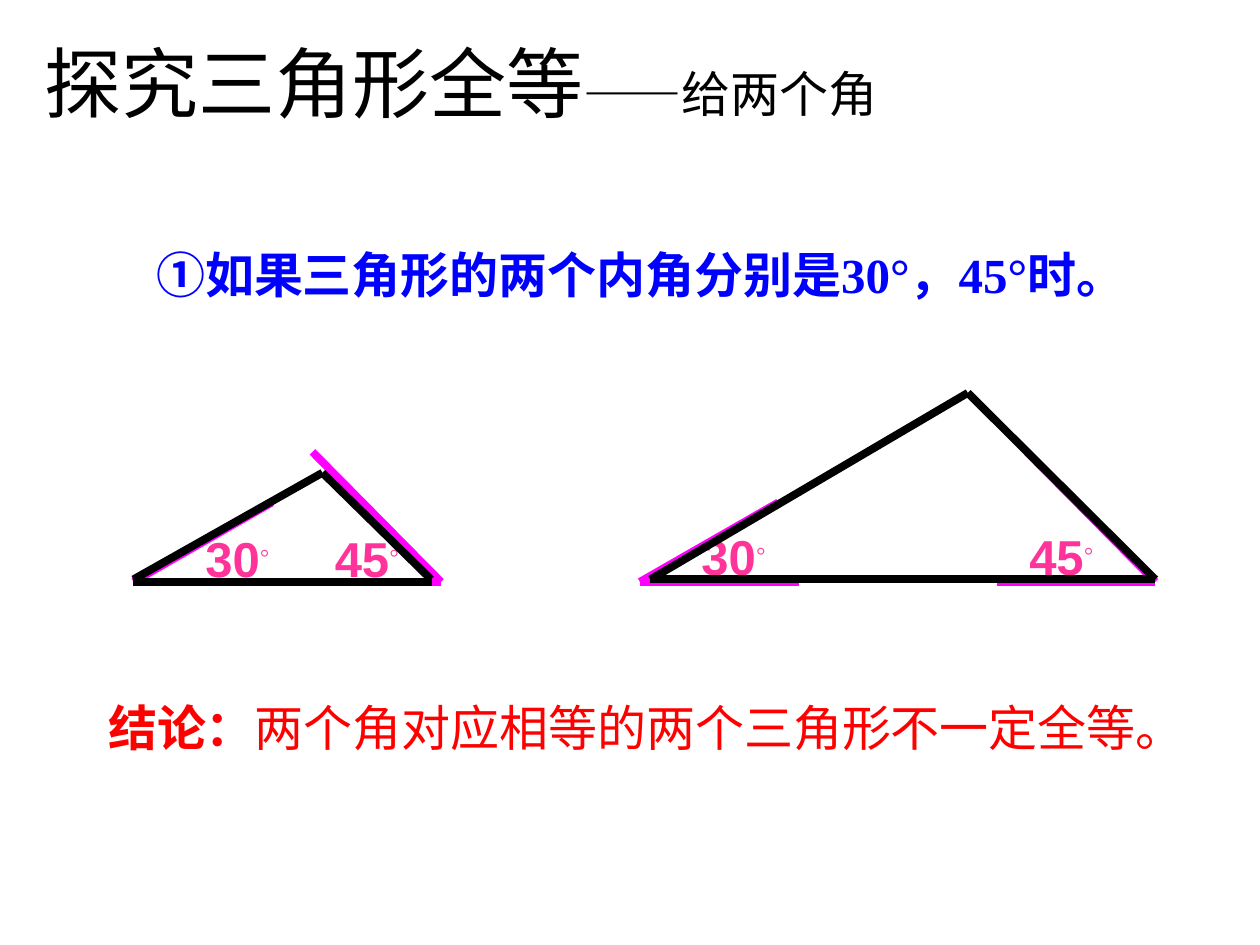
from dataclasses import dataclass

from lxml import etree
from pptx import Presentation
from pptx.dml.color import RGBColor
from pptx.enum.shapes import MSO_CONNECTOR
from pptx.enum.text import MSO_ANCHOR
from pptx.oxml.ns import qn
from pptx.slide import Slide
from pptx.util import Cm, Pt

STRAIGHT = MSO_CONNECTOR.STRAIGHT
TOP, MIDDLE = MSO_ANCHOR.TOP, MSO_ANCHOR.MIDDLE
COLORS = {
    "title": "000000",
    "case": "0000FF",
    "conclusion": "FF0000",
    "degrees": "FF3399",
    "angle": "FF00FF",
    "triangle": "000000",
}
Point = tuple[float, float]


@dataclass
class Piece:
    text: str
    size: float = 28
    bold: bool = False
    raised: bool = False


@dataclass
class Caption:
    left: float
    top: float
    width: float
    height: float
    font: str
    color: str
    pieces: list[Piece]
    anchor: MSO_ANCHOR = TOP
    hanging: float = 0


@dataclass
class Angle:
    degrees: str
    vertex_x: float
    label_left: float
    label_top: float


@dataclass
class Triangle:
    left: Point
    apex: Point
    right: Point
    bases: list[tuple[Point, Point]]


VERTEX_Y = 11.73
BASE_ARM = 3.2
ARMS = {
    "30": [(2.79, -1.6), (BASE_ARM, 0)],
    "45": [(-2.59, -2.62), (-BASE_ARM, 0)],
}
ANGLES = [
    Angle("45", 23.29, 20.5, 10.49),
    Angle("30", 12.9, 13.89, 10.49),
    Angle("45", 8.89, 6.5, 10.52),
    Angle("30", 2.69, 3.89, 10.52),
]
TRIANGLES = [
    Triangle((2.69, 11.68), (6.5, 9.53), (8.69, 11.68),
             [((2.69, 11.73), (8.71, 11.73))]),
    Triangle((13.11, 11.68), (19.51, 7.92), (23.29, 11.68),
             [((13.11, 11.68), (18.49, 11.68)),
              ((17.3, 11.68), (23.29, 11.68))]),
]
CAPTIONS = [
    Caption(1.93, 13.94, 22.66, 1.45, "Times New Roman", "conclusion",
            [Piece("结论：", bold=True),
             Piece("两个角对应相等的两个三角形不一定全等。")]),
    Caption(0.64, 0.56, 22.86, 2.18, "Noto Sans CJK SC", "title",
            [Piece("探究三角形全等", 44), Piece("——给两个角")], MIDDLE),
    Caption(2.9, 4.8, 21.92, 2.36, "Times New Roman", "case",
            [Piece("①如果三角形的两个内角分别是30°，45°时。", bold=True)],
            hanging=0.97),
]


def draw_stroke(slide: Slide, start: Point, end: Point, color: str) -> None:
    stroke = slide.shapes.add_connector(
        STRAIGHT, *(Cm(value) for value in (*start, *end)))
    stroke.line.color.rgb = RGBColor.from_string(COLORS[color])
    stroke.line.width = Pt(4.5)
    etree.SubElement(stroke._element.spPr, qn("a:effectLst"))


def draw_caption(slide: Slide, caption: Caption) -> None:
    box = slide.shapes.add_textbox(Cm(caption.left), Cm(caption.top),
                                   Cm(caption.width), Cm(caption.height))
    frame = box.text_frame
    frame.word_wrap = True
    frame.vertical_anchor = caption.anchor
    paragraph = frame.paragraphs[0]
    if caption.hanging:
        properties = paragraph._p.get_or_add_pPr()
        properties.set("marL", str(Cm(caption.hanging)))
        properties.set("indent", str(-Cm(caption.hanging)))
    for piece in caption.pieces:
        run = paragraph.add_run()
        run.text = piece.text
        run.font.name = caption.font
        run.font.size = Pt(piece.size)
        run.font.bold = piece.bold
        run.font.color.rgb = RGBColor.from_string(COLORS[caption.color])
        if piece.raised:
            run._r.get_or_add_rPr().set("baseline", "30000")


def draw_angle(slide: Slide, angle: Angle) -> None:
    draw_caption(slide, Caption(
        angle.label_left, angle.label_top, 3.2, 1.45, "Arial", "degrees",
        [Piece(angle.degrees, bold=True), Piece("◦", raised=True)]))
    for across, down in ARMS[angle.degrees]:
        draw_stroke(slide, (angle.vertex_x, VERTEX_Y),
                    (angle.vertex_x + across, VERTEX_Y + down), "angle")


def draw_triangle(slide: Slide, triangle: Triangle) -> None:
    sides = [(triangle.left, triangle.apex), (triangle.apex, triangle.right)]
    for start, end in sides + triangle.bases:
        draw_stroke(slide, start, end, "triangle")


def main() -> None:
    deck = Presentation()
    deck.slide_width, deck.slide_height = Cm(25.4), Cm(19.05)
    slide = deck.slides.add_slide(deck.slide_layouts[6])
    for angle in ANGLES:
        draw_angle(slide, angle)
    for triangle in TRIANGLES:
        draw_triangle(slide, triangle)
    for caption in CAPTIONS:
        draw_caption(slide, caption)
    deck.save("out.pptx")


if __name__ == "__main__":
    main()
